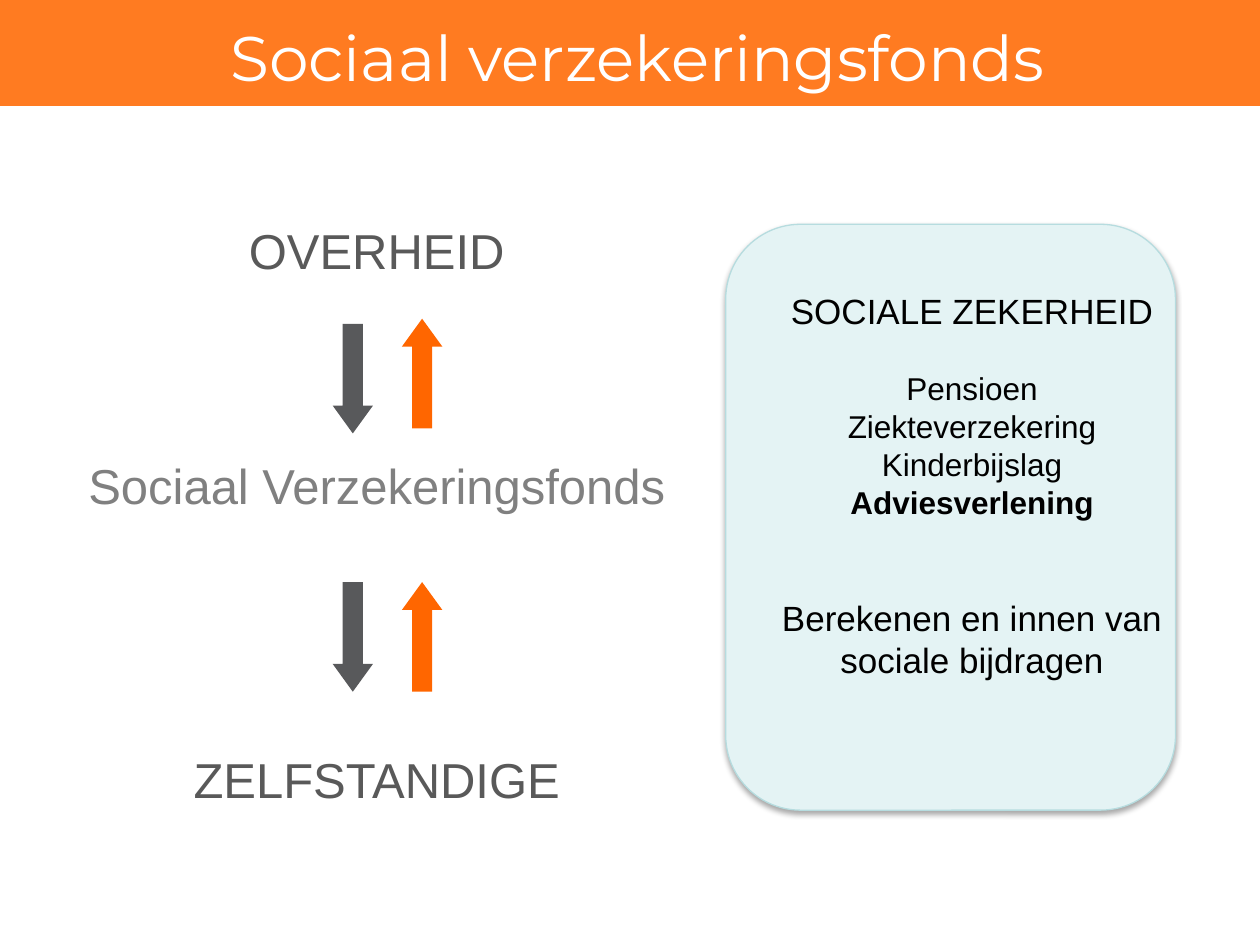
"""Build the slide about the social insurance fund."""
from lxml import etree
from pptx import Presentation
from pptx.dml.color import RGBColor
from pptx.enum.shapes import MSO_SHAPE
from pptx.enum.text import MSO_ANCHOR, PP_ALIGN
from pptx.oxml import parse_xml
from pptx.util import Inches, Pt

RECTANGLE = MSO_SHAPE.RECTANGLE
ROUNDED_RECTANGLE = MSO_SHAPE.ROUNDED_RECTANGLE
DOWN_ARROW = MSO_SHAPE.DOWN_ARROW
UP_ARROW = MSO_SHAPE.UP_ARROW
MIDDLE = MSO_ANCHOR.MIDDLE
CENTER = PP_ALIGN.CENTER

WHITE = RGBColor(0xFF, 0xFF, 0xFF)
BLACK = RGBColor(0x00, 0x00, 0x00)
BAND_ORANGE = RGBColor(0xFF, 0x7B, 0x21)
ARROW_ORANGE = RGBColor(0xFF, 0x66, 0x00)
ARROW_GRAY = RGBColor(0x58, 0x59, 0x5B)
DARK_GRAY = RGBColor(0x59, 0x59, 0x59)
MID_GRAY = RGBColor(0x80, 0x80, 0x80)
PANEL_FILL = RGBColor(0xE4, 0xF3, 0xF4)
PANEL_LINE = RGBColor(0xB6, 0xDC, 0xDF)

LINE_HEIGHT = 1.2
DRAWING_NAMESPACE = "http://schemas.openxmlformats.org/drawingml/2006/main"
PANEL_SHADOW = (
    f'<a:effectLst xmlns:a="{DRAWING_NAMESPACE}">'
    '<a:outerShdw blurRad="39370" dist="22860" dir="5400000" rotWithShape="0">'
    '<a:srgbClr val="000000"><a:alpha val="35000"/></a:srgbClr>'
    "</a:outerShdw></a:effectLst>"
)

FLOW_LINES = [
    ("OVERHEID", 28, DARK_GRAY, False, 0),
    ("Sociaal Verzekeringsfonds", 28, MID_GRAY, False, 100.8),
    ("ZELFSTANDIGE", 28, DARK_GRAY, False, 134.4),
]
SECURITY_LINES = [
    ("SOCIALE ZEKERHEID", 20, BLACK, False, 0),
    ("Pensioen", 18, BLACK, False, 21.6),
    ("Ziekteverzekering", 18, BLACK, False, 0),
    ("Kinderbijslag", 18, BLACK, False, 0),
    ("Adviesverlening", 18, BLACK, True, 0),
    ("Berekenen en innen van sociale bijdragen", 20, BLACK, False, 43.2),
]
ARROWS = [
    (DOWN_ARROW, 2.64, 2.57, ARROW_GRAY),
    (DOWN_ARROW, 2.64, 4.62, ARROW_GRAY),
    (UP_ARROW, 3.19, 2.53, ARROW_ORANGE),
    (UP_ARROW, 3.19, 4.62, ARROW_ORANGE),
]


def add_filled_shape(slide, kind, left, top, width, height, color):
    """Add a flat shape without outline or shadow."""
    shape = slide.shapes.add_shape(
        kind, Inches(left), Inches(top), Inches(width), Inches(height)
    )
    shape.shadow.inherit = False
    shape.fill.solid()
    shape.fill.fore_color.rgb = color
    shape.line.fill.background()
    return shape


def add_title_band(slide):
    """Add the orange band behind the title."""
    band = add_filled_shape(slide, RECTANGLE, 0, 0, 10, 0.84, BAND_ORANGE)
    slide.shapes.title.element.addprevious(band.element)


def format_title(slide, text):
    """Place the title and set its wording and font."""
    title = slide.shapes.title
    title.left, title.top = Inches(0.56), Inches(-0.18)
    title.width, title.height = Inches(9), Inches(1.25)
    title.text_frame.text = text
    title.text_frame.vertical_anchor = MIDDLE
    paragraph = title.text_frame.paragraphs[0]
    paragraph.alignment = CENTER
    font = paragraph.runs[0].font
    font.name, font.size = "Montserrat", Pt(36)
    font.color.rgb = WHITE


def add_arrow(slide, kind, left, top, color):
    """Add one vertical block arrow."""
    arrow = add_filled_shape(slide, kind, left, top, 0.32, 0.87, color)
    arrow.adjustments[0] = 0.5
    arrow.adjustments[1] = 0.69


def add_panel(slide):
    """Add the rounded panel with its soft shadow."""
    panel = add_filled_shape(
        slide, ROUNDED_RECTANGLE, 5.76, 1.78, 3.57, 4.65, PANEL_FILL
    )
    panel.line.color.rgb = PANEL_LINE
    panel.line.width = Pt(0.75)
    effects = panel.element.spPr.find(etree.QName(DRAWING_NAMESPACE, "effectLst").text)
    effects.getparent().replace(effects, parse_xml(PANEL_SHADOW))


def add_centered_text(slide, left, top, width, height, lines):
    """Add a text box of centred lines with their own format and spacing."""
    box = slide.shapes.add_textbox(
        Inches(left), Inches(top), Inches(width), Inches(height)
    )
    text_frame = box.text_frame
    text_frame.word_wrap = True
    text_frame.text = "\n".join(line[0] for line in lines)
    for paragraph, line in zip(text_frame.paragraphs, lines):
        _, size, color, bold, space_before = line
        paragraph.alignment = CENTER
        paragraph.line_spacing = Pt(size * LINE_HEIGHT)
        if space_before:
            paragraph.space_before = Pt(space_before)
        font = paragraph.runs[0].font
        font.name, font.size, font.bold = "Arial", Pt(size), bold
        font.color.rgb = color


def main():
    """Build and save the presentation."""
    presentation = Presentation()
    presentation.slide_width = Inches(10)
    presentation.slide_height = Inches(7.5)
    slide = presentation.slides.add_slide(presentation.slide_layouts[5])
    add_title_band(slide)
    format_title(slide, "Sociaal verzekeringsfonds")
    add_centered_text(slide, 0.51, 1.7, 4.96, 4.81, FLOW_LINES)
    for arrow in ARROWS:
        add_arrow(slide, *arrow)
    add_panel(slide)
    add_centered_text(slide, 6.1, 2.25, 3.23, 3.23, SECURITY_LINES)
    presentation.save("out.pptx")


if __name__ == "__main__":
    main()
